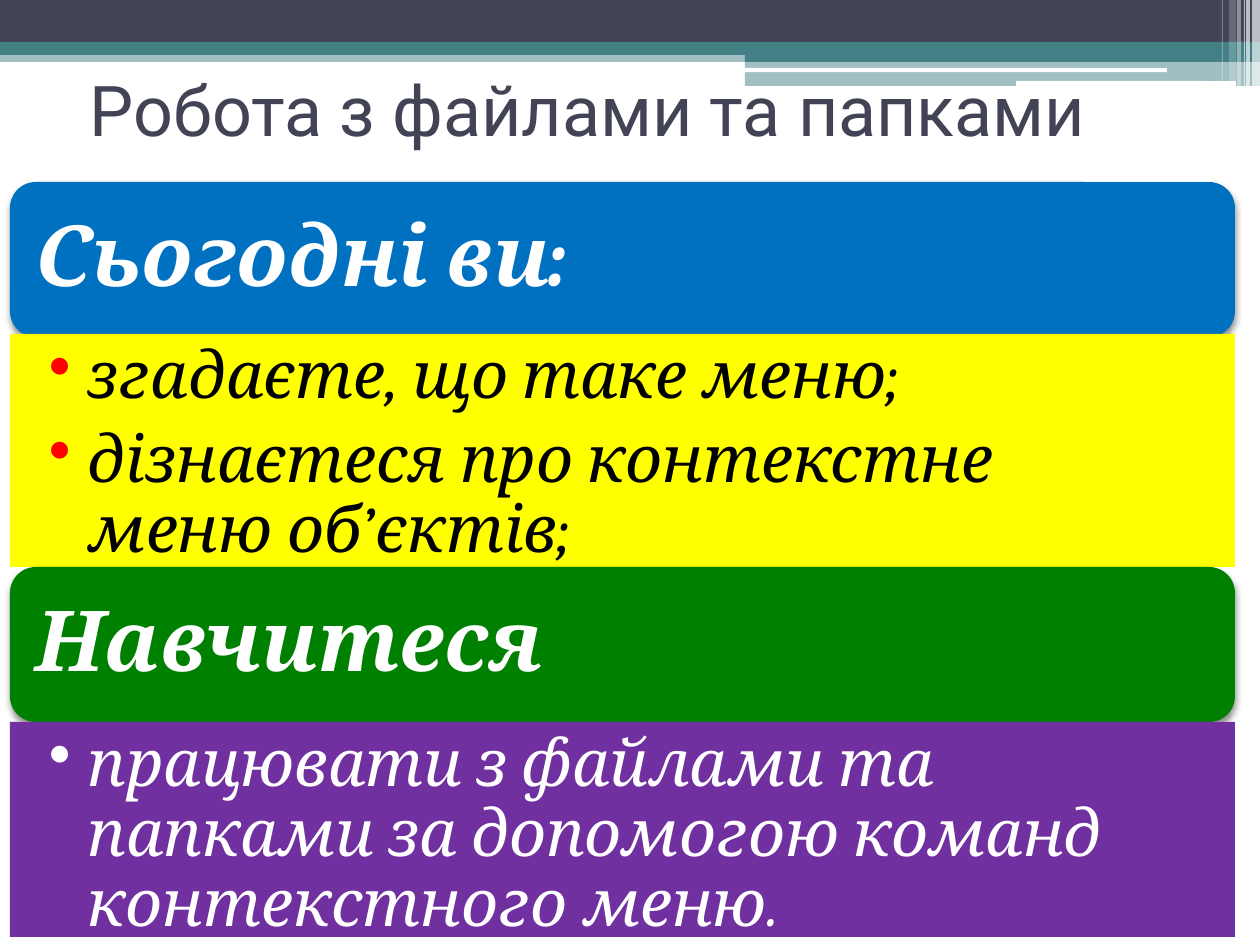
from lxml import etree
from pptx import Presentation
from pptx.dml.color import RGBColor
from pptx.enum.shapes import MSO_SHAPE
from pptx.enum.text import MSO_ANCHOR, PP_ALIGN
from pptx.oxml.ns import qn
from pptx.util import Pt

RECT, ROUNDED = MSO_SHAPE.RECTANGLE, MSO_SHAPE.ROUNDED_RECTANGLE
TOP, MIDDLE = MSO_ANCHOR.TOP, MSO_ANCHOR.MIDDLE
LEFT = PP_ALIGN.LEFT

EMU_PER_PX = 914400 / 126
SLIDE_W, SLIDE_H = 1260, 945
PANEL_LEFT, PANEL_W, HEADING_H = 10, 1225, 155
BULLET_INDENT = 39
NAVY, TEAL, WHITE, BLACK = "424456", "438086", "FFFFFF", "000000"

# left, top, width, height, colour, opacity in percent
BANDS = [
    (0, 50, SLIDE_W, 12, TEAL, 50),
    (0, 0, SLIDE_W, 43, NAVY, 100),
    (0, 42, SLIDE_W, 13, TEAL, 100),
    (745, 49, 515, 13, TEAL, 100),
    (745, 61, 515, 25, TEAL, 50),
]
HIGHLIGHTS = [(745, 68, 422, 4), (1016, 81, 220, 5)]
# left, width, height, opacity in percent
STRIPES = [
    (1252, 8, 86, 65),
    (1246, 4, 86, 65),
    (1244, 1, 86, 60),
    (1237, 4, 86, 40),
    (1229, 7, 81, 20),
    (1222, 1, 81, 30),
]

# heading, its top and fill; body top, height, fill, text and bullet colours; items
SECTIONS = [
    ("Сьогодні ви:", 182, "0070C0", 334, 233, "FFFF00", BLACK, "FF0000",
     ["згадаєте, що таке меню;", "дізнаєтеся про контекстне меню об’єктів;"]),
    ("Навчитеся", 567, "008000", 722, 215, "7030A0", WHITE, WHITE,
     ["працювати з файлами та папками за допомогою команд контекстного меню."]),
]


def px(length):
    return round(length * EMU_PER_PX)


def rgb(color):
    return RGBColor.from_string(color)


def add_block(slide, kind, box, color, opacity=100):
    block = slide.shapes.add_shape(kind, *map(px, box))
    block.shadow.inherit = False
    block.fill.solid()
    block.fill.fore_color.rgb = rgb(color)
    block.line.fill.background()
    if opacity < 100:
        color_tag = block.fill._xPr.find(".//" + qn("a:srgbClr"))
        etree.SubElement(color_tag, qn("a:alpha"), val=str(opacity * 1000))
    return block


def add_shadow(block):
    effects = block._element.spPr.find(qn("a:effectLst"))
    shadow = etree.SubElement(
        effects, qn("a:outerShdw"), blurRad=str(Pt(4)), dist=str(Pt(2)),
        dir="5400000", rotWithShape="0")
    color_tag = etree.SubElement(shadow, qn("a:srgbClr"), val=BLACK)
    etree.SubElement(color_tag, qn("a:alpha"), val="45000")


def set_frame(frame, anchor, left, top, right, bottom):
    frame.word_wrap = True
    frame.vertical_anchor = anchor
    frame.margin_left, frame.margin_top = px(left), px(top)
    frame.margin_right, frame.margin_bottom = px(right), px(bottom)


def style(paragraph, font_name, size, color, bold=False, italic=False):
    paragraph.alignment = LEFT
    font = paragraph.font
    font.name, font.size = font_name, Pt(size)
    font.bold, font.italic = bold, italic
    font.color.rgb = rgb(color)


def add_bullet(paragraph, color):
    props = paragraph._p.get_or_add_pPr()
    props.set("marL", str(px(BULLET_INDENT)))
    props.set("indent", str(-px(BULLET_INDENT)))
    bullet_color = etree.SubElement(props, qn("a:buClr"))
    etree.SubElement(bullet_color, qn("a:srgbClr"), val=color)
    etree.SubElement(props, qn("a:buChar"), char="•")


def add_decor(slide):
    for *box, color, opacity in BANDS:
        add_block(slide, RECT, box, color, opacity)
    for box in HIGHLIGHTS:
        add_block(slide, ROUNDED, box, WHITE)
    for left, width, height, opacity in STRIPES:
        add_block(slide, RECT, (left, 0, width, height), WHITE, opacity)


def add_title(slide, text):
    title = slide.shapes.add_textbox(px(77), px(37), px(1183), px(143))
    set_frame(title.text_frame, MIDDLE, 13, 6, 13, 6)
    paragraph = title.text_frame.paragraphs[0]
    paragraph.text = text
    style(paragraph, "Roboto", 40, NAVY)


def add_heading(slide, text, top, color):
    heading = add_block(slide, ROUNDED, (PANEL_LEFT, top, PANEL_W, HEADING_H), color)
    add_shadow(heading)
    set_frame(heading.text_frame, MIDDLE, 18, 18, 18, 18)
    paragraph = heading.text_frame.paragraphs[0]
    paragraph.text = text
    paragraph.line_spacing = 0.9
    style(paragraph, "Cambria", 48, WHITE, bold=True, italic=True)


def add_body(slide, items, top, height, color, text_color, bullet_color):
    body = add_block(slide, RECT, (PANEL_LEFT, top, PANEL_W, height), color)
    frame = body.text_frame
    set_frame(frame, TOP, 39, 9, 47, 9)
    for index, item in enumerate(items):
        paragraph = frame.add_paragraph() if index else frame.paragraphs[0]
        paragraph.text = item
        paragraph.line_spacing = 0.9
        paragraph.space_after = Pt(8)
        add_bullet(paragraph, bullet_color)
        style(paragraph, "Cambria", 37, text_color, italic=True)


def main():
    deck = Presentation()
    deck.slide_width, deck.slide_height = px(SLIDE_W), px(SLIDE_H)
    slide = deck.slides.add_slide(deck.slide_layouts[6])

    # Top banner and title
    add_decor(slide)
    add_title(slide, "Робота з файлами та папками")

    # Lesson goals
    for heading, heading_top, heading_fill, *body, items in SECTIONS:
        add_heading(slide, heading, heading_top, heading_fill)
        add_body(slide, items, *body)

    deck.save("out.pptx")


if __name__ == "__main__":
    main()
